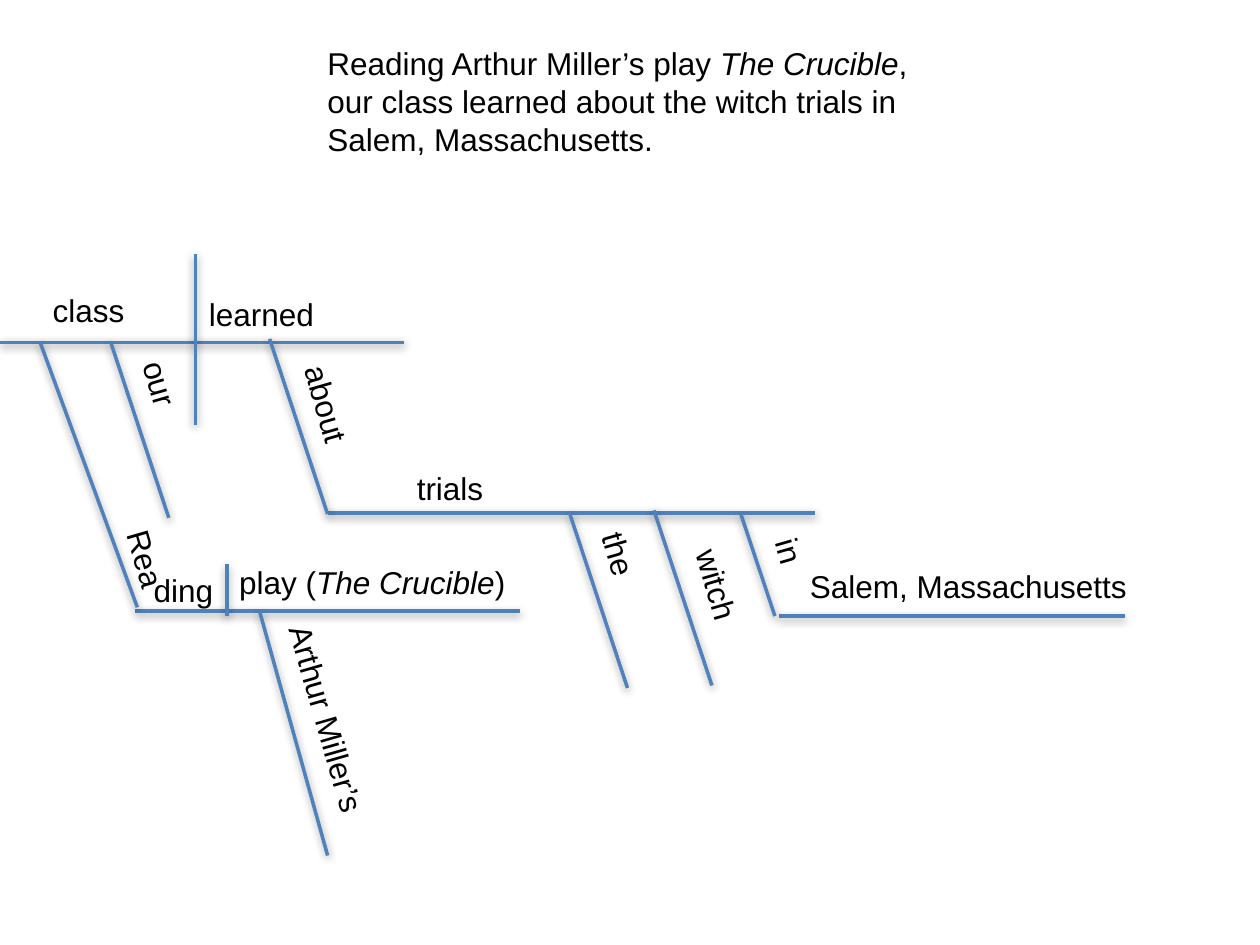
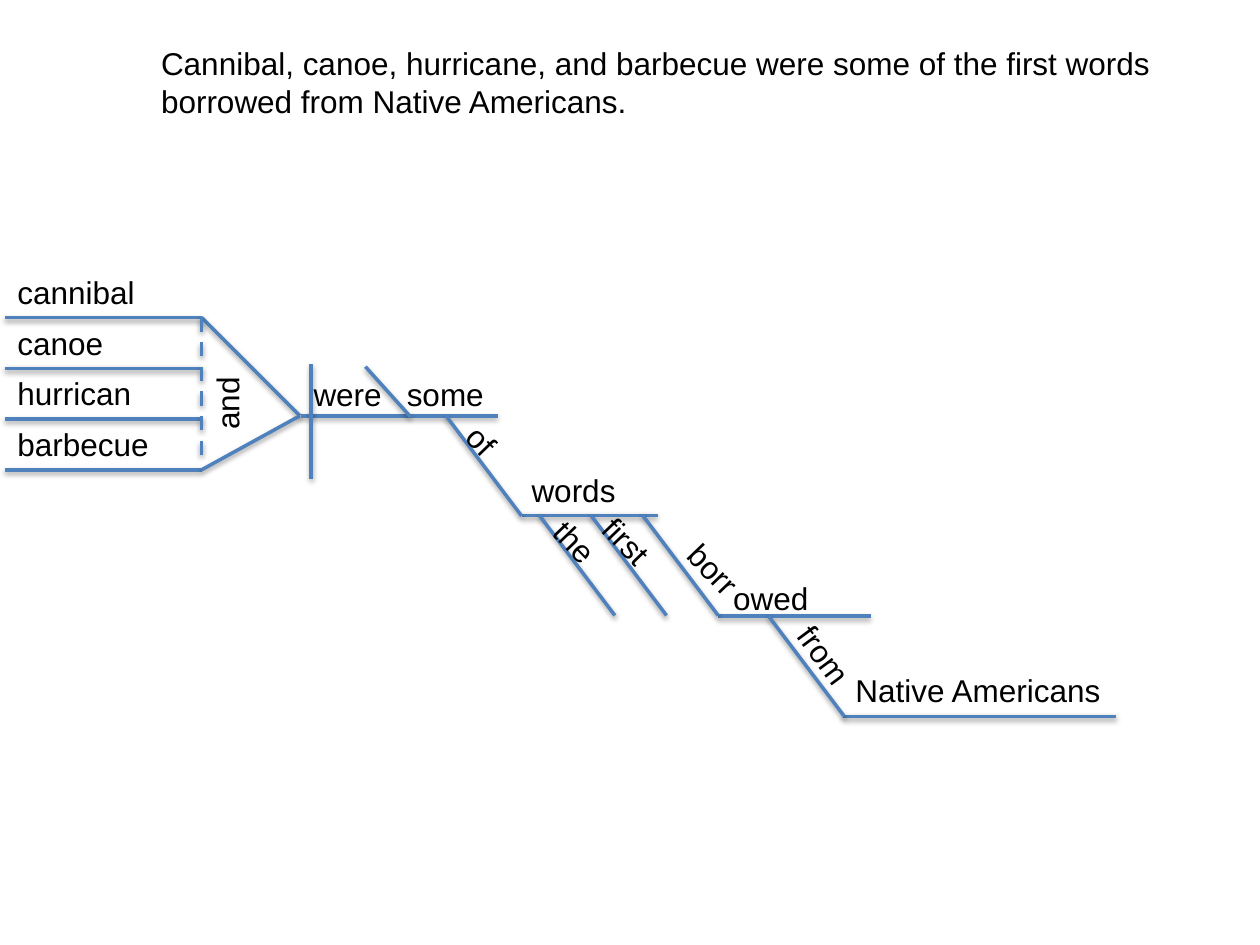
from lxml import etree
from pptx import Presentation
from pptx.dml.color import RGBColor
from pptx.enum.dml import MSO_LINE
from pptx.enum.shapes import MSO_CONNECTOR
from pptx.enum.text import MSO_AUTO_SIZE
from pptx.oxml.ns import qn
from pptx.util import Inches, Pt

STRAIGHT = MSO_CONNECTOR.STRAIGHT
DASH = MSO_LINE.DASH
GROW = MSO_AUTO_SIZE.SHAPE_TO_FIT_TEXT

BLUE = RGBColor(0x4F, 0x81, 0xBD)
BLACK = RGBColor(0x00, 0x00, 0x00)
FONT = "Arial"
TEXT_SIZE = Pt(18)
LINE_WIDTH = Pt(2)
SHADOW_DISTANCE = Pt(1.6)

# The grid has 100 columns and 75 square rows
SLIDE_WIDTH, SLIDE_HEIGHT = Inches(10), Inches(7.5)
CELL = SLIDE_WIDTH / 100
LABEL_ROWS = 4
TITLE_TOP = 3


def cells(count):
    return round(count * CELL)


def add_shadow(line, blur):
    """Give a line a soft grey shadow that falls straight down."""
    effects = etree.SubElement(line._element.spPr, qn("a:effectLst"))
    shadow = etree.SubElement(
        effects, qn("a:outerShdw"), blurRad=str(Pt(blur)),
        dist=str(SHADOW_DISTANCE), dir="5400000", rotWithShape="0")
    colour = etree.SubElement(shadow, qn("a:srgbClr"), val=str(BLACK))
    etree.SubElement(colour, qn("a:alpha"), val="38000")


def add_line(page, start, end, blur, dash=None):
    line = page.shapes.add_connector(
        STRAIGHT, *(cells(value) for value in (*start, *end)))
    line.line.color.rgb = BLUE
    line.line.width = LINE_WIDTH
    if dash:
        line.line.dash_style = dash
    add_shadow(line, blur)


def add_lines(page, ends, blur):
    for start, end in ends:
        add_line(page, start, end, blur)


def add_slants(page, tops, run, drop, blur):
    """Draw parallel modifier lines that hang from the given points."""
    add_lines(page, [((x, y), (x + run, y + drop)) for x, y in tops], blur)


def add_text(page, text, left, top, width, height=LABEL_ROWS, angle=0, wrap=False):
    """Write text; each newline starts a paragraph, *stars* mark italics."""
    box = page.shapes.add_textbox(*map(cells, (left, top, width, height)))
    box.rotation = angle
    frame = box.text_frame
    frame.word_wrap = wrap
    frame.auto_size = GROW
    frame.text = text.replace("*", "")
    for para, source in zip(frame.paragraphs, text.split("\n")):
        para.text = ""
        for index, part in enumerate(source.split("*")):
            span = para.add_run()
            span.text = part
            span.font.name = FONT
            span.font.size = TEXT_SIZE
            span.font.color.rgb = BLACK
            span.font.italic = index % 2 == 1


def add_labels(page, labels, angle=0):
    for text, left, top, width in labels:
        add_text(page, text, left, top, width, angle=angle)


def build_crucible(page):
    blur = 5
    add_text(page, "Reading Arthur Miller’s play *The Crucible*, our class learned "
             "about the witch trials in Salem, Massachusetts.",
             25, TITLE_TOP, 50, 10.1, wrap=True)

    # Baselines and the subject and verb dividers
    add_lines(page, [
        ((0, 27.2), (32.1, 27.2)),
        ((10.7, 48.5), (41.3, 48.5)),
        ((26, 40.7), (64.7, 40.7)),
        ((61.8, 48.9), (89.3, 48.9)),
        ((15.5, 20.2), (15.5, 33.7)),
        ((18, 44.8), (18, 48.9)),
    ], blur)

    # Modifiers: our, about, the, witch; then Reading, Arthur Miller’s, in
    add_slants(page, [(8.8, 27.2), (21.4, 26.9), (45.2, 40.7), (51.9, 40.5)],
               4.6, 13.9, blur)
    add_lines(page, [
        ((3.2, 27.2), (10.9, 48.2)),
        ((20.6, 48.5), (26, 67.9)),
        ((58.8, 40.8), (61.5, 48.9)),
    ], blur)

    add_labels(page, [
        ("class", 3.2, 22.6, 7.8),
        ("learned", 15.6, 22.9, 10.4),
        ("ding", 11.2, 44.8, 6.8),
        ("play (*The Crucible*)", 18, 44.2, 23.4),
        ("trials", 32.1, 36.7, 7.4),
        ("Salem, Massachusetts", 63.3, 44.5, 27.4),
    ])
    add_labels(page, [
        ("our", 9.9, 28.5, 5.7),
        ("Rea", 8.3, 42.4, 6.6),
        ("Arthur Miller’s", 17.2, 55.2, 17.6),
        ("about", 21.8, 30.1, 8.3),
        ("the", 46.4, 42, 5.5),
        ("witch", 53, 44.5, 7.9),
        ("in", 60.7, 41.8, 4),
    ], angle=73.9)


def build_words(page):
    blur = 3.1
    add_text(page, "Cannibal, canoe, hurricane, and barbecue were some of the first "
             "words\nborrowed from Native Americans.", 11.8, TITLE_TOP, 82, 7.1)

    # Compound subject: four stacked lines joined by a fork
    left, right, first_row, step = 0.4, 16, 25.2, 4.03
    subjects = [("cannibal", 11.4), ("canoe", 8.9), ("hurrican", 11.1), ("barbecue", 12.5)]
    for index, (word, width) in enumerate(subjects):
        row = first_row + index * step
        add_line(page, (left, row), (right, row), blur)
        add_text(page, word, left, row - step, width)
    last_row = first_row + (len(subjects) - 1) * step
    for row in (first_row, last_row):
        add_line(page, (right, row), (23.8, 33), blur)
    add_line(page, (right, first_row), (right, 36.9), blur, DASH)
    add_text(page, "and", 14.9, 30, 6.2, angle=270)

    # Baselines, the subject divider and the complement stroke
    add_lines(page, [
        ((23.9, 33), (39.5, 33)),
        ((41.4, 40.9), (52.2, 40.9)),
        ((57, 48.9), (69.1, 48.9)),
        ((66.9, 56.85), (88.6, 56.85)),
        ((24.7, 28.9), (24.7, 38)),
        ((29, 29.1), (32.6, 33.1)),
    ], blur)

    # Modifiers: of, the, first, borrowed, from
    hanging = [(42.8 + 4.1 * index, 40.9) for index in range(3)]
    add_slants(page, [(35.4, 33), *hanging, (61, 48.9)], 6, 7.95, blur)

    add_labels(page, [
        ("were", 23.9, 29.3, 7.4),
        ("some", 31.3, 29.3, 8.1),
        ("words", 41.2, 36.9, 8.8),
        ("owed", 57.2, 45.5, 8.1),
        ("Native Americans", 66.9, 52.8, 21.7),
    ])
    add_labels(page, [
        ("of", 36.2, 33, 4.1),
        ("the", 42.9, 41, 5.5),
        ("first", 46.7, 41, 6.1),
        ("borr", 53.4, 43.2, 6.5),
    ], angle=46.1)
    add_text(page, "from", 61.9, 50, 7.1, angle=53.5)


def main():
    deck = Presentation()
    deck.slide_width, deck.slide_height = SLIDE_WIDTH, SLIDE_HEIGHT
    blank = deck.slide_layouts[6]
    for build in (build_crucible, build_words):
        build(deck.slides.add_slide(blank))
    deck.save("out.pptx")


if __name__ == "__main__":
    main()
